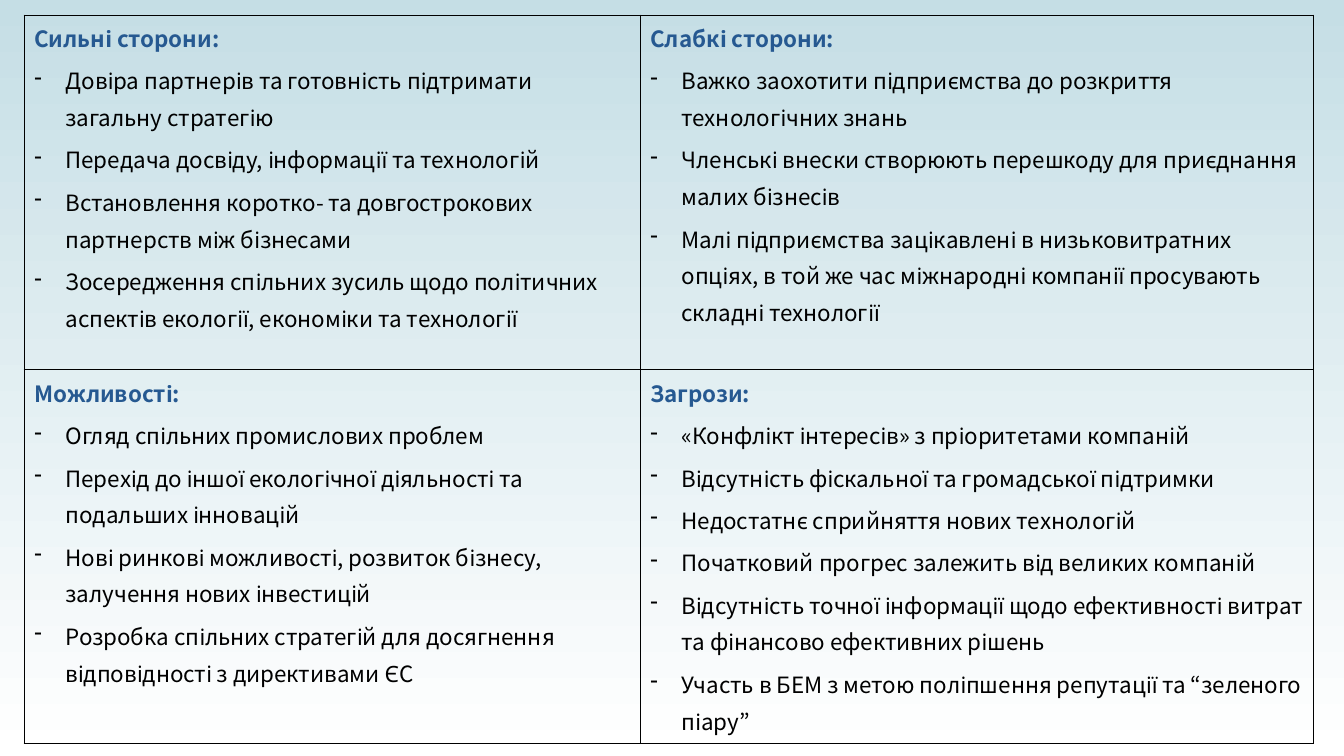
"""Builds a SWOT slide: a two-by-two bordered table on a gradient background."""
from dataclasses import dataclass

from lxml import etree
from pptx import Presentation
from pptx.dml.color import RGBColor
from pptx.enum.text import MSO_ANCHOR
from pptx.oxml.ns import qn
from pptx.util import Inches, Pt

TOP = MSO_ANCHOR.TOP


@dataclass(frozen=True)
class Theme:
    font: str = "Noto Sans CJK JP"
    size: int = 16
    heading: str = "265991"
    body: str = "000000"
    border: str = "000000"
    bottom: str = "FFFFFF"
    top: str = "C5DEE5"


theme = Theme()

SWOT = [
    [
        ("Сильні сторони:", [
            "Довіра партнерів та готовність підтримати загальну стратегію",
            "Передача досвіду, інформації та технологій",
            "Встановлення коротко- та довгострокових партнерств між бізнесами",
            "Зосередження спільних зусиль щодо політичних аспектів екології, економіки та технології",
        ]),
        ("Слабкі сторони:", [
            "Важко заохотити підприємства до розкриття технологічних знань",
            "Членські внески створюють перешкоду для приєднання малих бізнесів",
            "Малі підприємства зацікавлені в низьковитратних опціях, в той же час "
            "міжнародні компанії просувають складні технології",
        ]),
    ],
    [
        ("Можливості:", [
            "Огляд спільних промислових проблем",
            "Перехід до іншої екологічної діяльності та подальших інновацій",
            "Нові ринкові можливості, розвиток бізнесу, залучення нових інвестицій",
            "Розробка спільних стратегій для досягнення відповідності з директивами ЄС",
        ]),
        ("Загрози:", [
            "«Конфлікт інтересів» з пріоритетами компаній",
            "Відсутність фіскальної та громадської підтримки",
            "Недостатнє сприйняття нових технологій",
            "Початковий прогрес залежить від великих компаній",
            "Відсутність точної інформації щодо ефективності витрат та фінансово ефективних рішень",
            "Участь в БЕМ з метою поліпшення репутації та “зеленого піару”",
        ]),
    ],
]
COL_WIDTHS = [6.11, 6.68]
ROW_HEIGHTS = [3.52, 3.71]
CELL_FORMAT = {
    "vertical_anchor": TOP,
    "margin_left": Inches(0.1),
    "margin_right": Inches(0.1),
    "margin_top": Inches(0.02),
    "margin_bottom": Inches(0.02),
}
PARAGRAPH_FORMAT = {"line_spacing": 1.14, "space_before": Pt(2), "space_after": Pt(2)}


def add_borders(cell):
    """Draws a thin line on all four sides of a cell."""
    tcPr = cell._tc.get_or_add_tcPr()
    for i, side in enumerate(("a:lnL", "a:lnR", "a:lnT", "a:lnB")):
        ln = etree.Element(qn(side), w=str(Pt(1)))
        fill = etree.SubElement(ln, qn("a:solidFill"))
        etree.SubElement(fill, qn("a:srgbClr"), val=theme.border)
        tcPr.insert(i, ln)


def write_paragraph(p, text, heading):
    """Writes a bold heading or a dashed list item."""
    for name, value in PARAGRAPH_FORMAT.items():
        setattr(p, name, value)
    if not heading:
        pPr = p._p.get_or_add_pPr()
        pPr.set("marL", str(Inches(0.31)))
        pPr.set("indent", str(-Inches(0.31)))
        etree.SubElement(pPr, qn("a:buChar"), char="-")
    r = p.add_run()
    r.text = text
    for name, value in {"name": theme.font, "size": Pt(theme.size), "bold": heading}.items():
        setattr(r.font, name, value)
    r.font.color.rgb = RGBColor.from_string(theme.heading if heading else theme.body)


prs = Presentation()
prs.slide_width, prs.slide_height = Inches(13.33), Inches(7.5)
s = prs.slides.add_slide(prs.slide_layouts[6])

fill = s.background.fill
fill.gradient()
fill.gradient_angle = 90
for stop, color in zip(fill.gradient_stops, (theme.bottom, theme.top)):
    stop.color.rgb = RGBColor.from_string(color)

table = s.shapes.add_table(
    2, 2, Inches(0.24), Inches(0.15), Inches(sum(COL_WIDTHS)), Inches(sum(ROW_HEIGHTS))
).table
table.first_row = table.horz_banding = False
for column, width in zip(table.columns, COL_WIDTHS):
    column.width = Inches(width)
for row, height in zip(table.rows, ROW_HEIGHTS):
    row.height = Inches(height)

for row, quadrants in zip(table.rows, SWOT):
    for cell, (title, items) in zip(row.cells, quadrants):
        for name, value in CELL_FORMAT.items():
            setattr(cell, name, value)
        cell.fill.background()
        add_borders(cell)
        tf = cell.text_frame
        write_paragraph(tf.paragraphs[0], title, True)
        for item in items:
            write_paragraph(tf.add_paragraph(), item, False)

prs.save("out.pptx")
